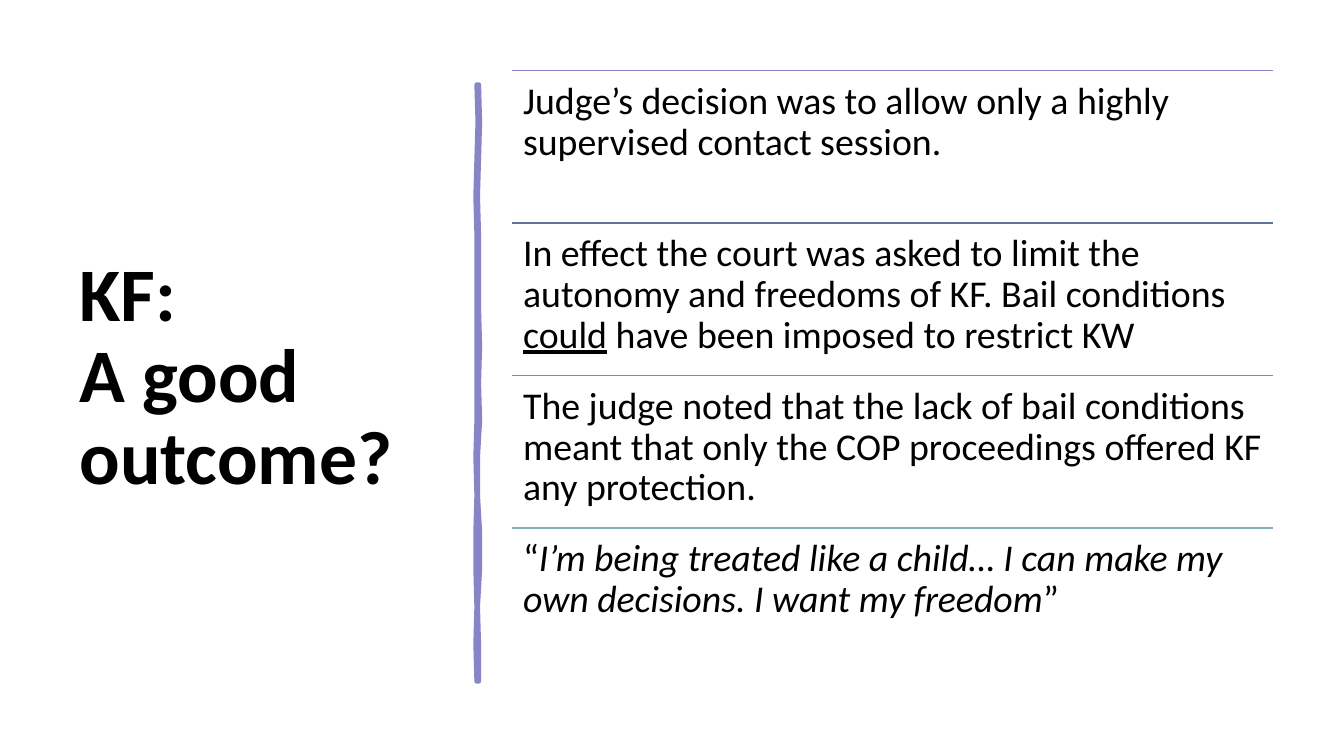
import dataclasses

import lxml.etree
import pptx
import pptx.dml.color
import pptx.enum.shapes
import pptx.enum.text
import pptx.oxml.ns
import pptx.shapes.autoshape
import pptx.slide
import pptx.text.text
import pptx.util

WIDTH = pptx.util.Inches(13.333)
HEIGHT = pptx.util.Inches(7.5)
FONT = "Calibri"
BLACK = "000000"
VIOLET = "8784C7"

POINTS_LEFT = 38.1
POINTS_WIDTH = 56.63
POINTS_TOP = 9.33
POINT_HEIGHT = 20.17

BAR_CENTER = 35.55
BAR_TOP = 11.2
BAR_HEIGHT = 78.93
BAR_RIGHT_EDGE = [1, 2, 1, 0, 1, 1, 1, 2, 1, 2, 0, 0, 2, 2, 0, 1, 1]
BAR_LEFT_EDGE = [-1, 0, -1, -2, -1, -1, -1, -1, -1, -1, -2, -1, -2, -2, -1, -2, -1]
BAR_WOBBLE = 0.08


@dataclasses.dataclass(frozen=True)
class Piece:
    text: str
    underline: bool = False
    italic: bool = False


@dataclasses.dataclass(frozen=True)
class Point:
    rule_color: str
    pieces: list[Piece]


POINTS = [
    Point(VIOLET, [Piece("Judge’s decision was to allow only a highly supervised contact session.")]),
    Point("5D739A", [
        Piece("In effect the court was asked to limit the autonomy and freedoms of KF. Bail conditions "),
        Piece("could", underline=True),
        Piece(" have been imposed to restrict KW"),
    ]),
    Point("6997AF", [
        Piece("The judge noted that the lack of bail conditions meant that only "
              "the COP proceedings offered KF any protection."),
    ]),
    Point("84ACB6", [
        Piece("“"),
        Piece("I’m being treated like a child… I can make my own decisions. I want my freedom", italic=True),
        Piece("”"),
    ]),
]


def across(percent: float) -> int:
    return round(WIDTH * percent / 100)


def down(percent: float) -> int:
    return round(HEIGHT * percent / 100)


def color(code: str) -> pptx.dml.color.RGBColor:
    return pptx.dml.color.RGBColor.from_string(code)


def style_span(span: pptx.text.text._Run, size: float, bold: bool = False) -> None:
    span.font.name = FONT
    span.font.size = pptx.util.Pt(size)
    span.font.bold = bold
    span.font.color.rgb = color(BLACK)


def add_box(page: pptx.slide.Slide, left: float, top: float, width: float,
            height: float) -> pptx.shapes.autoshape.Shape:
    box = page.shapes.add_textbox(across(left), down(top), across(width), down(height))
    box.text_frame.word_wrap = True
    box.text_frame.paragraphs[0].line_spacing = 0.9
    return box


def add_title(page: pptx.slide.Slide) -> None:
    frame = add_box(page, 5.18, 9.33, 28.06, 81.47).text_frame
    frame.vertical_anchor = pptx.enum.text.MSO_ANCHOR.MIDDLE
    para = frame.paragraphs[0]
    para.text = "KF: \vA good outcome?"
    for span in para.runs:
        style_span(span, 54, bold=True)


def add_bar(page: pptx.slide.Slide) -> None:
    step = BAR_HEIGHT / (len(BAR_RIGHT_EDGE) - 1)
    right, left = [
        [(across(BAR_CENTER + BAR_WOBBLE * shift), down(BAR_TOP + step * index))
         for index, shift in enumerate(edge)]
        for edge in (BAR_RIGHT_EDGE, BAR_LEFT_EDGE)
    ]
    outline = right + left[::-1]
    builder = page.shapes.build_freeform(*outline[0])
    builder.add_line_segments(outline[1:], close=True)
    bar = builder.convert_to_shape()
    bar.shadow.inherit = False
    bar.fill.solid()
    bar.fill.fore_color.rgb = color(VIOLET)
    bar.line.color.rgb = color(VIOLET)
    bar.line.width = pptx.util.Pt(3.25)


def add_rule(page: pptx.slide.Slide, top: float, code: str) -> None:
    rule = page.shapes.add_connector(
        pptx.enum.shapes.MSO_CONNECTOR.STRAIGHT,
        across(POINTS_LEFT), down(top), across(POINTS_LEFT + POINTS_WIDTH), down(top))
    rule.line.color.rgb = color(code)
    rule.line.width = pptx.util.Pt(1)
    lxml.etree.SubElement(rule.element.spPr, pptx.oxml.ns.qn("a:effectLst"))


def add_point(page: pptx.slide.Slide, top: float, point: Point) -> None:
    add_rule(page, top, point.rule_color)
    frame = add_box(page, POINTS_LEFT, top, POINTS_WIDTH, POINT_HEIGHT).text_frame
    frame.margin_left = frame.margin_right = pptx.util.Inches(0.11)
    frame.margin_top = frame.margin_bottom = pptx.util.Inches(0.11)
    for piece in point.pieces:
        span = frame.paragraphs[0].add_run()
        span.text = piece.text
        style_span(span, 27)
        span.font.underline = piece.underline
        span.font.italic = piece.italic


def main() -> None:
    deck = pptx.Presentation()
    deck.slide_width = WIDTH
    deck.slide_height = HEIGHT
    page = deck.slides.add_slide(deck.slide_layouts[6])
    add_title(page)
    add_bar(page)
    for row, point in enumerate(POINTS):
        add_point(page, POINTS_TOP + row * POINT_HEIGHT, point)
    deck.save("out.pptx")


if __name__ == "__main__":
    main()
